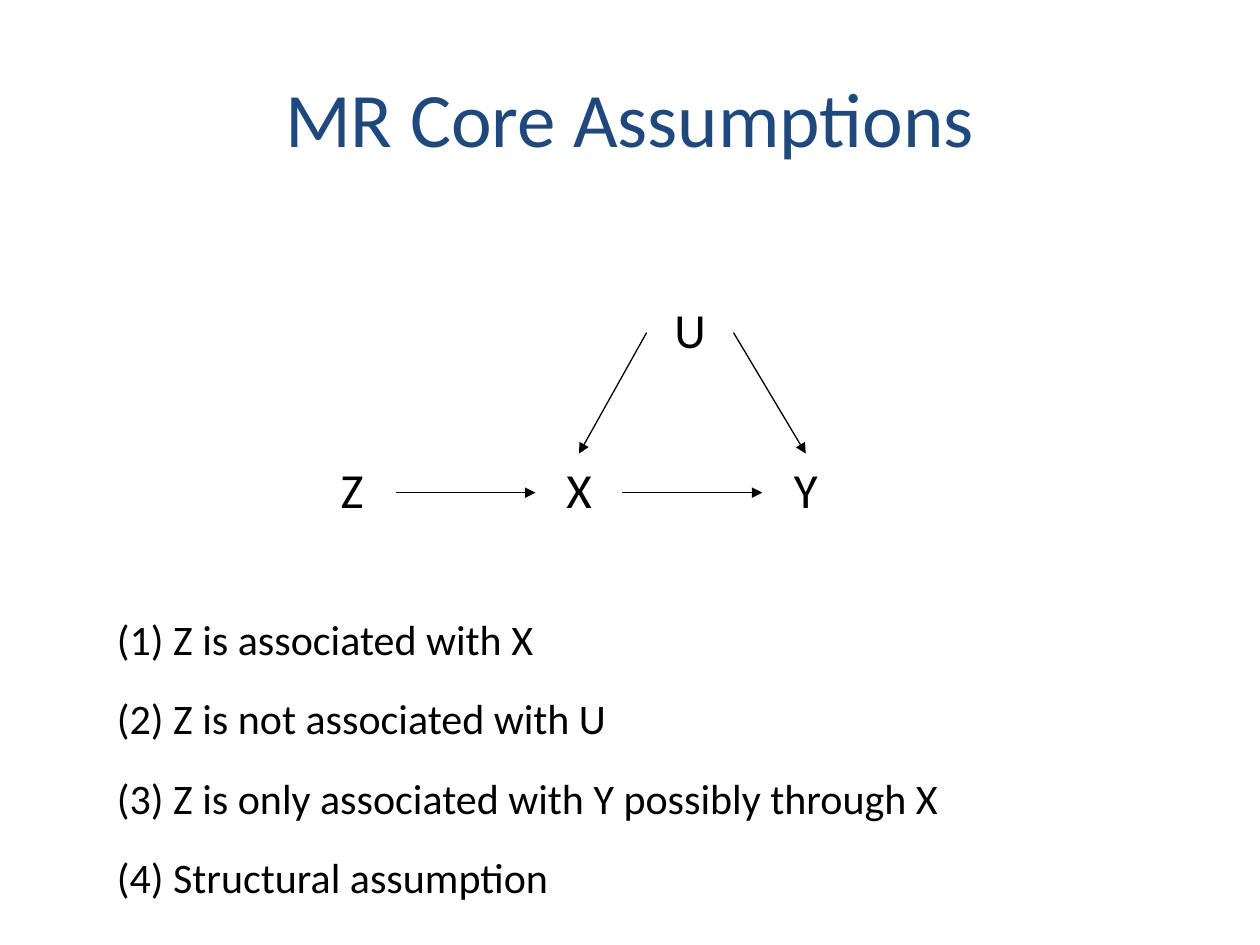
"""Build the MR core assumptions slide with its causal diagram."""
import pptx
import pptx.util
import pptx.dml.color
import pptx.enum.shapes
import pptx.enum.text
import pptx.oxml
import pptx.oxml.ns

TITLE = "MR Core Assumptions"
NODES = {"Z": (0, 1), "X": (1, 1), "Y": (2, 1), "U": (1.49, 0)}
TOP, LEFT, BOTTOM, RIGHT = range(4)
ARROWS = [
    ("Z", RIGHT, "X", LEFT),
    ("X", RIGHT, "Y", LEFT),
    ("U", LEFT, "X", TOP),
    ("U", RIGHT, "Y", TOP),
]
ASSUMPTIONS = [
    "(1) Z is associated with X",
    "(2) Z is not associated with U",
    "(3) Z is only associated with Y possibly through X",
    "(4) Structural assumption",
]
WIDTHS = [3.53, 4.12, 6.77, 3.66]
COLORS = {"title": "1F497D", "ink": "000000", "paper": "FFFFFF"}
FONT = "Calibri"
GRID_X, GRID_Y, COL, ROW = 2.45, 2.33, 1.8, 1.27
NODE_W, NODE_H = 0.69, 0.62
LIST_X, LIST_Y, LIST_STEP, LIST_H = 0.83, 4.82, 0.63, 0.5


def rgb(name):
    return pptx.dml.color.RGBColor.from_string(COLORS[name])


def box(*lengths):
    return [pptx.util.Inches(v) for v in lengths]


def write(tf, text, size, color="ink", align=None):
    p = tf.paragraphs[0]
    p.alignment = align
    r = p.add_run()
    r.text = text
    r.font.size = pptx.util.Pt(size)
    r.font.name = FONT
    r.font.color.rgb = rgb(color)
    return p


def add_node(s, name, col, row):
    sp = s.shapes.add_shape(
        pptx.enum.shapes.MSO_SHAPE.RECTANGLE,
        *box(GRID_X + col * COL, GRID_Y + row * ROW, NODE_W, NODE_H))
    sp.shadow.inherit = False
    sp.fill.solid()
    sp.fill.fore_color.rgb = rgb("paper")
    sp.line.fill.background()
    sp.text_frame.vertical_anchor = pptx.enum.text.MSO_ANCHOR.TOP
    p = write(sp.text_frame, name, 28, align=pptx.enum.text.PP_ALIGN.CENTER)
    p.space_after = pptx.util.Pt(10)
    return sp


def add_arrow(s, start, start_side, end, end_side):
    c = s.shapes.add_connector(
        pptx.enum.shapes.MSO_CONNECTOR.STRAIGHT, 0, 0, 0, 0)
    c.begin_connect(start, start_side)
    c.end_connect(end, end_side)
    c.line.color.rgb = rgb("ink")
    c.line.width = pptx.util.Pt(0.75)
    ns = pptx.oxml.ns.nsdecls("a")
    ln = c.line._get_or_add_ln()
    ln.append(pptx.oxml.parse_xml(f'<a:tailEnd {ns} type="triangle"/>'))
    ln.addnext(pptx.oxml.parse_xml(f"<a:effectLst {ns}/>"))


def main():
    prs = pptx.Presentation()
    prs.slide_width, prs.slide_height = box(10, 7.5)
    s = prs.slides.add_slide(prs.slide_layouts[5])

    title = s.shapes.title
    title.left, title.top, title.width, title.height = box(0.5, 0.3, 9, 1.25)
    title.text_frame.vertical_anchor = pptx.enum.text.MSO_ANCHOR.MIDDLE
    write(title.text_frame, TITLE, 44, "title", pptx.enum.text.PP_ALIGN.CENTER)

    nodes = {name: add_node(s, name, *cell) for name, cell in NODES.items()}
    for start, start_side, end, end_side in ARROWS:
        add_arrow(s, nodes[start], start_side, nodes[end], end_side)

    for i, (text, width) in enumerate(zip(ASSUMPTIONS, WIDTHS)):
        tb = s.shapes.add_textbox(
            *box(LIST_X, LIST_Y + i * LIST_STEP, width, LIST_H))
        tf = tb.text_frame
        tf.word_wrap = False
        tf.auto_size = pptx.enum.text.MSO_AUTO_SIZE.SHAPE_TO_FIT_TEXT
        write(tf, text, 24)

    prs.save("out.pptx")


if __name__ == "__main__":
    main()
